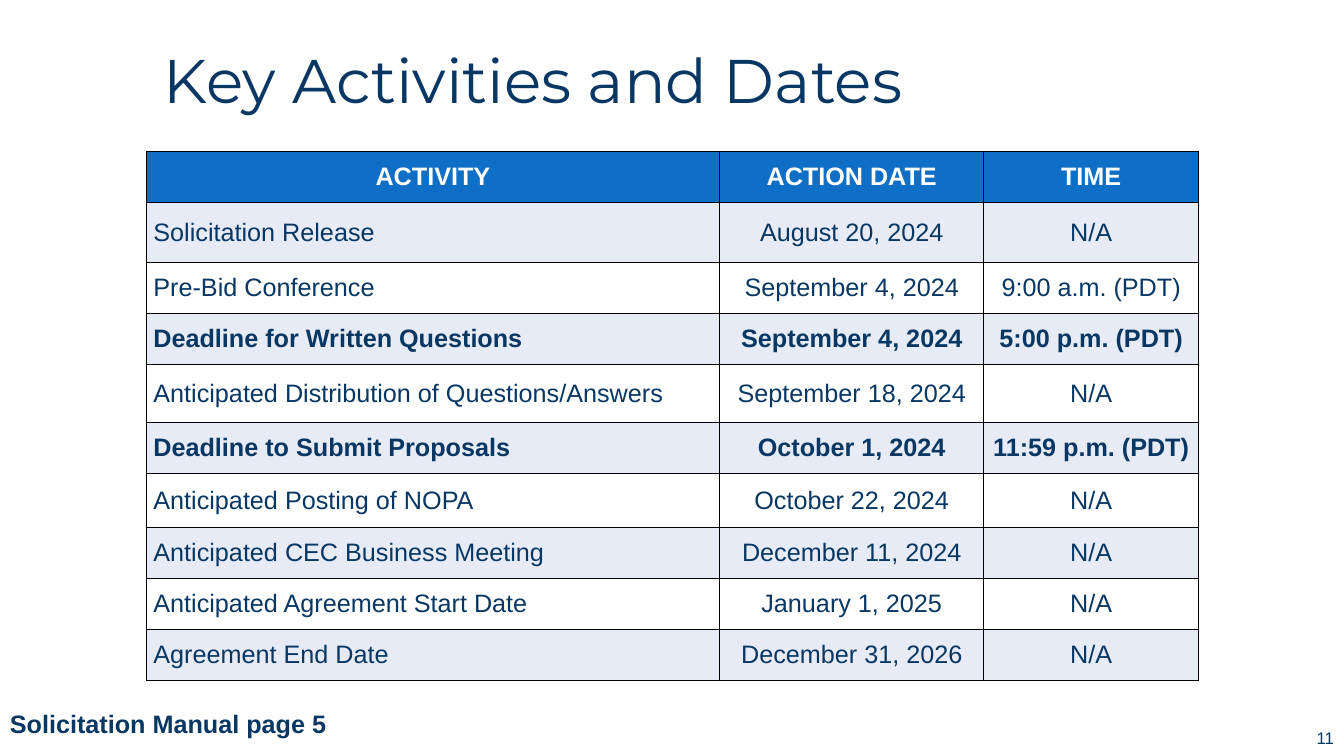
from lxml import etree
from pptx import Presentation
from pptx.dml.color import RGBColor
from pptx.enum.text import MSO_ANCHOR, PP_ALIGN
from pptx.oxml.ns import qn
from pptx.util import Pt

LEFT, MID, RIGHT = PP_ALIGN.LEFT, PP_ALIGN.CENTER, PP_ALIGN.RIGHT
TOP, CENTER = MSO_ANCHOR.TOP, MSO_ANCHOR.MIDDLE

COLORS = {
    "navy": "083763",
    "blue": "0F6FC6",
    "band": "E7EBF5",
    "white": "FFFFFF",
    "black": "000000",
}

HEAD = ("ACTIVITY", "ACTION DATE", "TIME")
DATES = [
    ("Solicitation Release", "August 20, 2024", "N/A"),
    ("Pre-Bid Conference", "September 4, 2024", "9:00 a.m. (PDT)"),
    ("Deadline for Written Questions", "September 4, 2024", "5:00 p.m. (PDT)"),
    ("Anticipated Distribution of Questions/Answers", "September 18, 2024", "N/A"),
    ("Deadline to Submit Proposals", "October 1, 2024", "11:59 p.m. (PDT)"),
    ("Anticipated Posting of NOPA", "October 22, 2024", "N/A"),
    ("Anticipated CEC Business Meeting", "December 11, 2024", "N/A"),
    ("Anticipated Agreement Start Date", "January 1, 2025", "N/A"),
    ("Agreement End Date", "December 31, 2026", "N/A"),
]
SHARES = (0.545, 0.251, 0.204)
ROW = 36.45
TALL = {1: 43, 4: 41.5, 6: 38.3}


def color(name):
    return RGBColor.from_string(COLORS[name])


def style(para, size, tint="navy", bold=False, align=LEFT, face="Arial"):
    para.alignment = align
    for run in para.runs:
        font = run.font
        font.name, font.size, font.bold = face, Pt(size), bold
        font.color.rgb = color(tint)


def add_text(slide, box, text, size, anchor=TOP, **look):
    frame = slide.shapes.add_textbox(*map(Pt, box)).text_frame
    frame.word_wrap = True
    frame.vertical_anchor = anchor
    frame.text = text
    style(frame.paragraphs[0], size, **look)
    return frame


def add_title(slide, box):
    frame = add_text(slide, box, "Key Activities and Dates", 44, CENTER, face="Montserrat")
    frame.paragraphs[0].line_spacing = 0.9


def add_border(cell):
    props = cell._tc.get_or_add_tcPr()
    for side in ("a:lnL", "a:lnR", "a:lnT", "a:lnB"):
        line = etree.SubElement(props, qn(side), w=str(Pt(1)))
        fill = etree.SubElement(line, qn("a:solidFill"))
        etree.SubElement(fill, qn("a:srgbClr"), val=COLORS["black"])


def fill_cell(cell, text, back, **look):
    add_border(cell)
    cell.fill.solid()
    cell.fill.fore_color.rgb = color(back)
    cell.vertical_anchor = CENTER
    cell.margin_left = cell.margin_right = Pt(5.2)
    cell.margin_top = cell.margin_bottom = 0
    cell.text = text
    style(cell.text_frame.paragraphs[0], 18, **look)


def add_dates(slide, box):
    rows = [HEAD] + DATES
    table = slide.shapes.add_table(len(rows), len(HEAD), *map(Pt, box)).table
    for col, share in zip(table.columns, SHARES):
        col.width = Pt(box[2] * share)
    for r, texts in enumerate(rows):
        table.rows[r].height = Pt(TALL.get(r, ROW))
        back = "blue" if r == 0 else "band" if r % 2 else "white"
        tint = "navy" if r else "white"
        bold = r == 0 or texts[0].startswith("Deadline")
        for c, text in enumerate(texts):
            align = LEFT if r and c == 0 else MID
            fill_cell(table.cell(r, c), text, back, tint=tint, bold=bold, align=align)


def add_footer(slide, box):
    left, top, width, height = box
    add_text(slide, (left, top, 252, 29), "Solicitation Manual page 5", 18, bold=True)
    page = (left + width - 142, top + height - 29, 142, 29)
    add_text(slide, page, "11", 12, CENTER, align=RIGHT)


def main():
    deck = Presentation()
    deck.slide_width, deck.slide_height = Pt(960), Pt(540)
    slide = deck.slides.add_slide(deck.slide_layouts[6])
    add_title(slide, (110, 18.7, 784, 82))
    add_dates(slide, (104.4, 108.2, 751.7, 378))
    add_footer(slide, (0, 502.6, 960, 39))
    deck.save("out.pptx")


if __name__ == "__main__":
    main()
